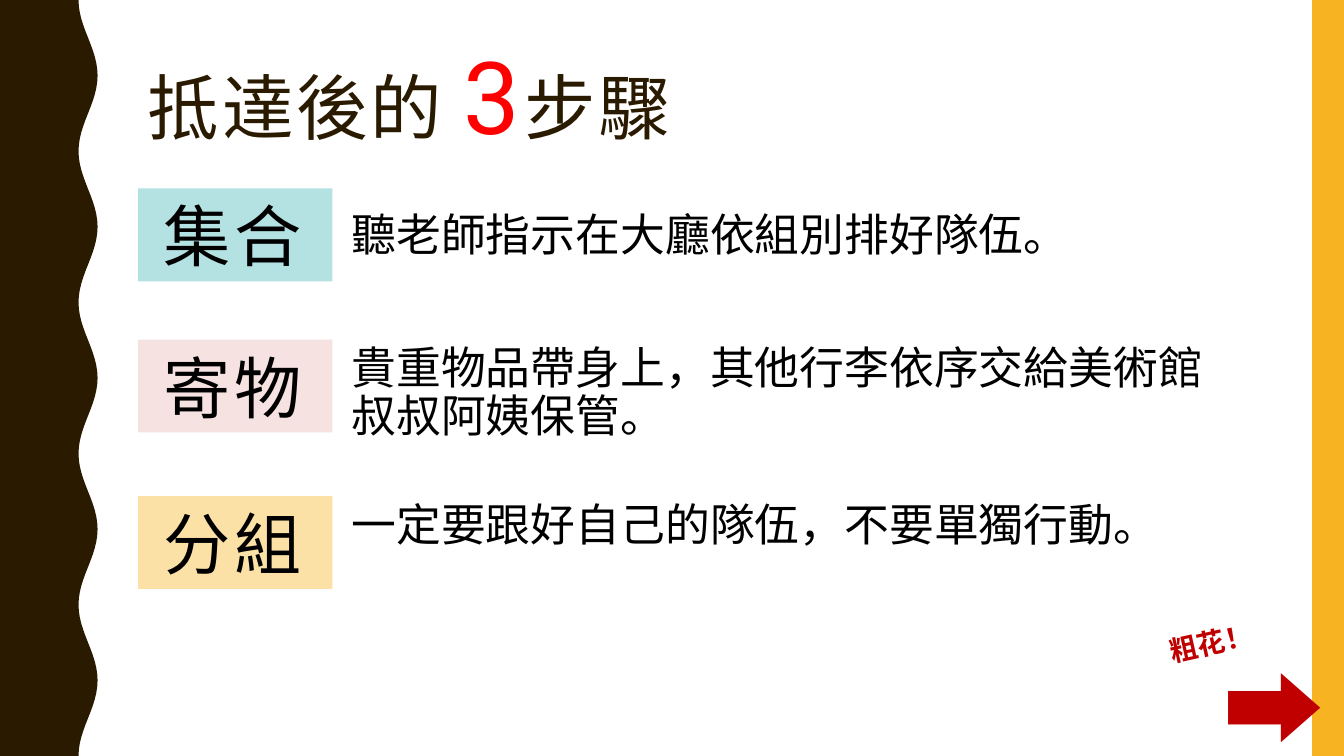
"""Build the slide with the three steps to follow on arrival."""
from math import cos, pi

from lxml.etree import SubElement
from pptx import Presentation
from pptx.dml.color import RGBColor as RGB
from pptx.enum.shapes import MSO_SHAPE as SHAPE
from pptx.enum.text import MSO_ANCHOR as ANCHOR, PP_ALIGN as ALIGN
from pptx.oxml.ns import qn
from pptx.util import Cm, Pt

COLORS = {"brown": "2A1A00", "gold": "F8B323", "white": "FFFFFF",
          "black": "000000", "red": "FF0000", "crimson": "C00000",
          "teal": "B4E1E2", "pink": "F6E2E1", "sand": "FCE1A7"}
CJK, LATIN = "Noto Sans CJK JP", "Roboto"
WIDTH, HEIGHT = 33.87, 19.05
LEFT = 3.48


class Deck:
    def __init__(self):
        self.prs = Presentation()
        self.prs.slide_width, self.prs.slide_height = Cm(WIDTH), Cm(HEIGHT)
        self.s = self.prs.slides.add_slide(self.prs.slide_layouts[6])

    def paint(self, sp, color):
        sp.shadow.inherit = False
        sp.fill.solid()
        sp.fill.fore_color.rgb = RGB.from_string(COLORS[color])
        sp.line.fill.background()

    def wave(self, middle, swing, period, color, steps=24):
        count = round(HEIGHT / period * steps)
        edge = [(Cm(middle - swing * cos(2 * pi * i / steps)),
                 Cm(i * period / steps)) for i in range(count + 1)]
        builder = self.s.shapes.build_freeform(0, 0, scale=1.0)
        builder.add_line_segments(edge + [(0, Cm(HEIGHT))], close=True)
        self.paint(builder.convert_to_shape(), color)

    def rect(self, box, color):
        sp = self.s.shapes.add_shape(SHAPE.RECTANGLE, *map(Cm, box))
        self.paint(sp, color)
        return sp

    def textbox(self, box, rotation=0):
        sp = self.s.shapes.add_textbox(*map(Cm, box))
        sp.rotation = rotation
        return sp

    def style(self, font, size, color, face=CJK, spacing=0, bold=False):
        font.size, font.bold, font.name = Pt(size), bold, face
        font.color.rgb = RGB.from_string(COLORS[color])
        rpr = font._rPr
        rpr.set("spc", str(spacing * 100))
        SubElement(rpr, qn("a:ea")).set("typeface", face)

    def paragraph(self, sp, inset=0.25, top=0.13, anchor=ANCHOR.TOP, leading=1.0):
        tf = sp.text_frame
        tf.word_wrap, tf.vertical_anchor = True, anchor
        tf.margin_left, tf.margin_top = Cm(inset), Cm(top)
        p = tf.paragraphs[0]
        p.alignment, p.line_spacing = ALIGN.LEFT, leading
        return p

    def label(self, sp, text, size, color, spacing=0, bold=False, **layout):
        p = self.paragraph(sp, **layout)
        p.add_run().text = text
        self.style(p.font, size, color, spacing=spacing, bold=bold)

    def title(self, box, runs):
        p = self.paragraph(self.textbox(box), leading=0.9)
        for text, *look in runs:
            r = p.add_run()
            r.text = text
            self.style(r.font, *look)


def main():
    deck = Deck()
    deck.wave(2.22, 0.24, HEIGHT / 5, "brown")
    deck.rect((33.07, 0, 0.8, HEIGHT), "gold")
    deck.title((LEFT, 1.07, 28.27, 4.14), [
        ("抵達後的 ", 51, "brown", CJK, 2),
        ("3", 72, "red", LATIN, 3),
        ("步驟", 51, "brown", CJK, 2)])

    steps = [
        ("集合", "teal", 4.75, "聽老師指示在大廳依組別排好隊伍。", (5.08, 23.14, 2.01)),
        ("寄物", "pink", 8.56, "貴重物品帶身上，其他行李依序交給美術館叔叔阿姨保管。",
         (8.43, 22.4, 2.92)),
        ("分組", "sand", 12.5, "一定要跟好自己的隊伍，不要單獨行動。", (12.4, 22.4, 2.92))]
    for name, color, name_top, detail, (top, width, height) in steps:
        deck.label(deck.rect((LEFT, name_top, 4.9, 2.34), color), name, 48, "black",
                   spacing=3, inset=0.64, anchor=ANCHOR.MIDDLE)
        deck.label(deck.rect((8.61, top, width, height), "white"), detail, 32, "black",
                   top=0.28, leading=0.9)

    deck.label(deck.textbox((29.21, 15.42, 4.62, 1.37), -12.7), "粗花！", 20, "crimson",
               bold=True)
    deck.label(deck.textbox((30.1, 16.13, 3.7, 3.33)), "➡", 72, "crimson", inset=0.74)
    deck.prs.save("out.pptx")


if __name__ == "__main__":
    main()
